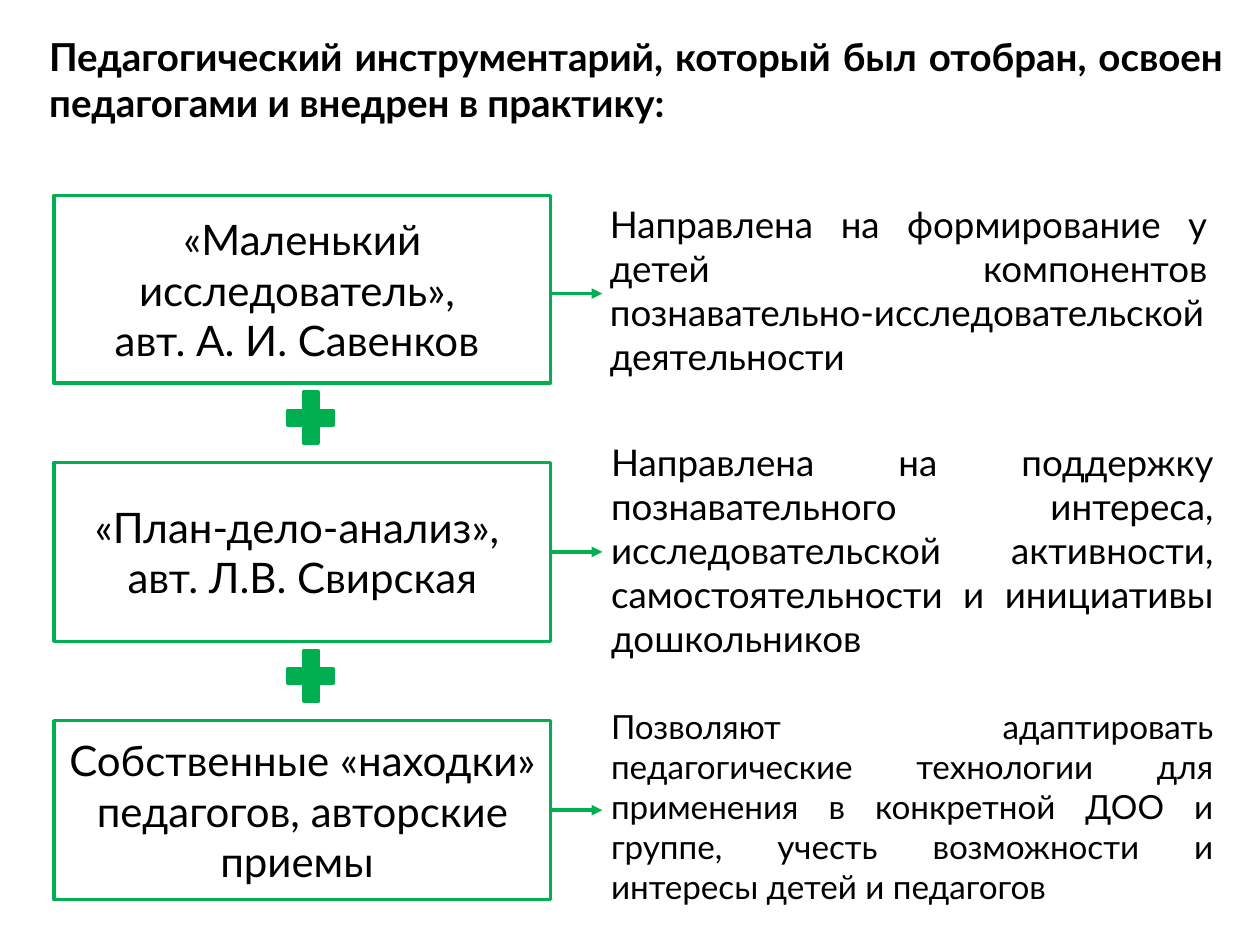
import pptx
import pptx.dml.color
import pptx.enum.shapes
import pptx.enum.text
import pptx.oxml
import pptx.oxml.ns
import pptx.util
import lxml.etree

Inches = pptx.util.Inches
Align = pptx.enum.text.PP_ALIGN
Anchor = pptx.enum.text.MSO_ANCHOR
Preset = pptx.enum.shapes.MSO_SHAPE

FONT = "Lato"
GREEN = "00B050"
BLACK = "000000"
ROW_STEP = 2.05
BOX_LEFT, BOX_WIDTH = 0.43, 3.94
FIRST_BOX_BOTTOM = 3.04
FIRST_ARROW_Y = 2.33

HEADING = ("Педагогический инструментарий, который был отобран, освоен "
           "педагогами и внедрен в практику:")

# Each row: box lines, box height, description, its place, its font size
ROWS = [
    (["«Маленький исследователь», ", "авт. А. И. Савенков "], 1.49,
     "Направлена на формирование у детей компонентов "
     "познавательно-исследовательской деятельности",
     (4.65, 1.55, 5.03, 1.42), 21),
    (["«План-дело-анализ», ", "авт. Л.В. Свирская"], 1.42,
     "Направлена на поддержку познавательного интереса, исследовательской "
     "активности, самостоятельности и инициативы дошкольников",
     (4.66, 3.44, 5.07, 1.73), 21),
    (["Собственные «находки» педагогов, авторские приемы "], 1.42,
     "Позволяют адаптировать педагогические технологии для применения в "
     "конкретной ДОО и группе, учесть возможности и интересы детей и педагогов",
     (4.66, 5.56, 5.07, 1.73), 19),
]


def color(hex_string):
    return pptx.dml.color.RGBColor.from_string(hex_string)


def write_text(shape, lines, size, alignment, anchor, bold=False):
    frame = shape.text_frame
    frame.word_wrap = True
    frame.auto_size = pptx.enum.text.MSO_AUTO_SIZE.NONE
    frame.vertical_anchor = anchor
    frame.text = "\n".join(lines)
    for paragraph in frame.paragraphs:
        paragraph.alignment = alignment
        paragraph.font.name = FONT
        paragraph.font.size = pptx.util.Pt(size)
        paragraph.font.bold = bold
        paragraph.font.color.rgb = color(BLACK)


def write_justified(shape, text, size, bold=False):
    write_text(shape, [text], size, Align.JUSTIFY, Anchor.TOP, bold)
    shape.text_frame.margin_left = Inches(0.19)


def add_heading(slide):
    title = slide.shapes.title
    title.left, title.top = Inches(0.2), Inches(0.21)
    title.width, title.height = Inches(9.61), Inches(1.26)
    write_justified(title, HEADING, 22, bold=True)


def add_green_shape(slide, preset, left, top, width, height, filled=False):
    shape = slide.shapes.add_shape(
        preset, Inches(left), Inches(top), Inches(width), Inches(height))
    shape.shadow.inherit = False
    if filled:
        shape.fill.solid()
        shape.fill.fore_color.rgb = color(GREEN)
    else:
        shape.fill.background()
    shape.line.color.rgb = color(GREEN)
    shape.line.width = pptx.util.Pt(2)
    return shape


def add_arrow(slide, y):
    arrow = slide.shapes.add_connector(
        pptx.enum.shapes.MSO_CONNECTOR.STRAIGHT,
        Inches(BOX_LEFT + BOX_WIDTH), Inches(y), Inches(4.78), Inches(y))
    arrow.line.color.rgb = color(GREEN)
    arrow.line.width = pptx.util.Pt(2)
    qualified = pptx.oxml.ns.qn
    head = lxml.etree.SubElement(arrow.line._get_or_add_ln(), qualified("a:tailEnd"))
    head.set("type", "triangle")
    lxml.etree.SubElement(arrow._element.spPr, qualified("a:effectLst"))


def add_description(slide, text, place, size):
    box = slide.shapes.add_textbox(*map(Inches, place))
    write_justified(box, text, size)


def main():
    presentation = pptx.Presentation()
    presentation.slide_width = Inches(10)
    presentation.slide_height = Inches(7.5)
    slide = presentation.slides.add_slide(presentation.slide_layouts[5])
    add_heading(slide)

    # Method box, arrow and description in every row
    for index, (lines, height, description, place, size) in enumerate(ROWS):
        offset = index * ROW_STEP
        bottom = FIRST_BOX_BOTTOM + offset
        box = add_green_shape(slide, Preset.RECTANGLE, BOX_LEFT,
                              bottom - height, BOX_WIDTH, height)
        write_text(box, lines, 24, Align.CENTER, Anchor.MIDDLE)
        add_arrow(slide, FIRST_ARROW_Y + offset)
        add_description(slide, description, place, size)
        # Plus sign between neighbouring boxes
        if index < len(ROWS) - 1:
            add_green_shape(slide, Preset.MATH_PLUS, 2.22, bottom, 0.49, 0.55,
                            filled=True)

    presentation.save("out.pptx")


if __name__ == "__main__":
    main()
